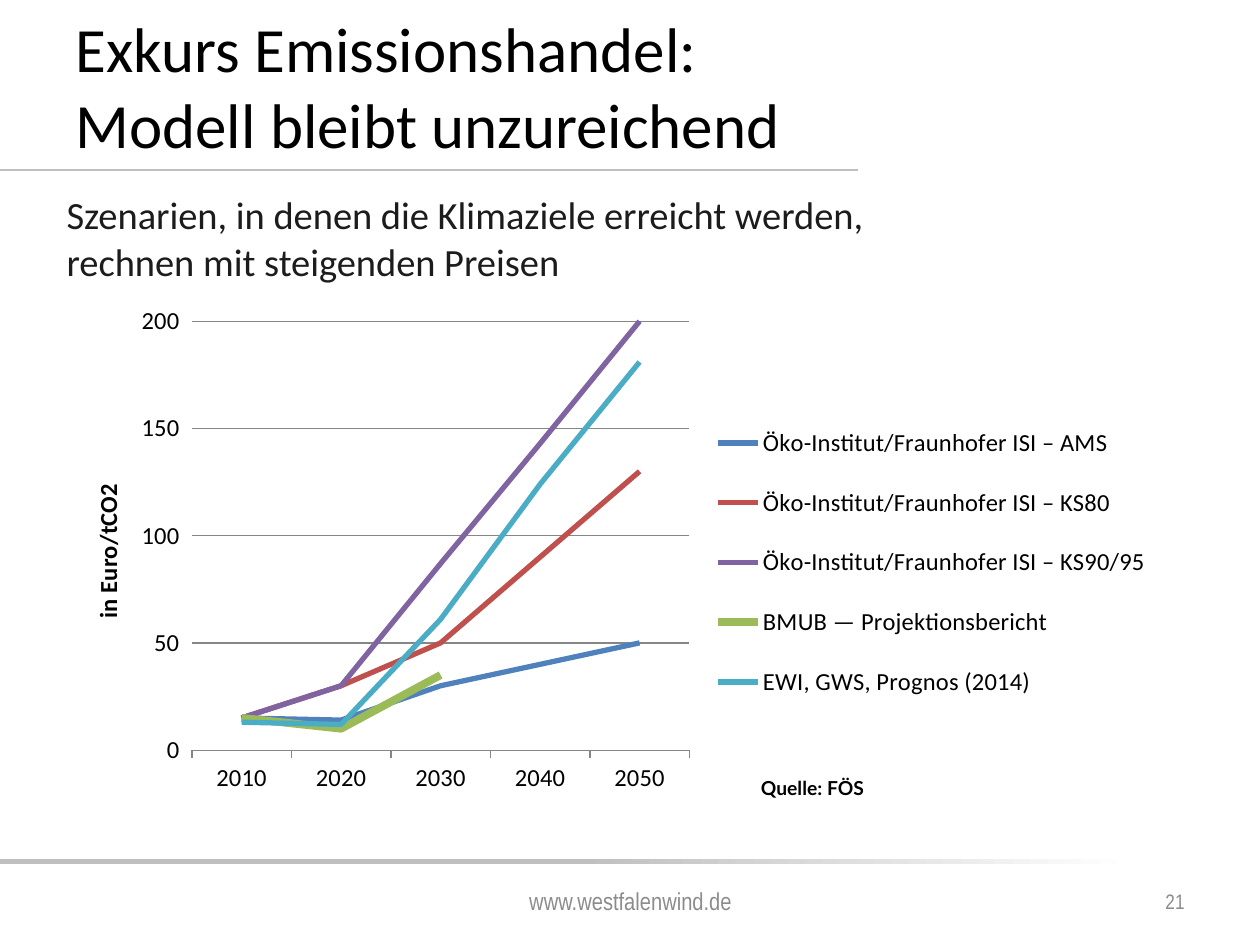
from copy import deepcopy
from dataclasses import dataclass

from lxml.etree import SubElement
from pptx import Presentation
from pptx.chart.data import CategoryChartData
from pptx.dml.color import RGBColor
from pptx.enum.chart import XL_CHART_TYPE as ChartType, XL_LEGEND_POSITION as LegendPosition
from pptx.enum.chart import XL_MARKER_STYLE as MarkerStyle, XL_TICK_MARK as TickMark
from pptx.enum.shapes import MSO_CONNECTOR as Connector, MSO_SHAPE as Shape
from pptx.enum.text import MSO_ANCHOR as Anchor, PP_ALIGN as Align
from pptx.oxml.ns import qn
from pptx.util import Inches, Pt


@dataclass(frozen=True)
class Theme:
    font: str = "Calibri"
    footer_font: str = "Arial Narrow"
    source_font: str = "Lato"
    black: str = "000000"
    body: str = "1C1C1C"
    muted: str = "8C8C8C"
    rule: str = "BFBFBF"
    grid: str = "868686"
    white: str = "FFFFFF"
    title_size: int = 36
    lead_size: int = 22
    chart_size: int = 14
    page_size: int = 12
    source_size: int = 11


THEME = Theme()

# Content
TITLE = ["Exkurs Emissionshandel: ", "Modell bleibt unzureichend"]
LEAD = "Szenarien, in denen die Klimaziele erreicht werden, rechnen mit steigenden Preisen"
SOURCE = "Quelle: FÖS"
FOOTER, PAGE = "www.westfalenwind.de", "21"
AXIS_TITLE = "in Euro/tCO2"
YEARS = ["2010", "2020", "2030", "2040", "2050"]
SCENARIOS = [  # name, values, colour, line width
    ("Öko-Institut/Fraunhofer ISI – AMS", (15, 14, 30, 40, 50), "4F81BD", 3),
    ("Öko-Institut/Fraunhofer ISI – KS80", (15, 30, 50, 90, 130), "C0504D", 3),
    ("Öko-Institut/Fraunhofer ISI – KS90/95", (15, 30, 87, 143, 200), "8064A2", 3),
    ("BMUB — Projektionsbericht", (15, 10, 35, None, None), "9BBB59", 4.5),
    ("EWI, GWS, Prognos (2014)", (13, 12, 61, 124, 181), "4BACC6", 3),
]

# Boxes in inches: left, top, width, height
TITLE_BOX = (0.5, 0.05, 9, 1.25)
LEAD_BOX = (0.43, 1.47, 7.48, 0.84)
CHART_BOX = (0.51, 2.02, 8.66, 4.57)
SOURCE_BOX = (5.94, 6.11, 2.59, 0.29)
FOOTER_BOX = (3.42, 6.95, 3.17, 0.4)
PAGE_BOX = (7.17, 6.95, 2.33, 0.4)
FOOTER_RULE_BOX = (0, 6.82, 10, 0.04)
TITLE_RULE = (0, 1.35, 6.81, 1.35)

# Shares of the chart's size
PLOT_SHARE = {"x": 0.117, "y": 0.116, "w": 0.456, "h": 0.745}
LEGEND_SHARE = {"x": 0.59, "y": 0.25, "w": 0.41, "h": 0.57}
AXIS_TITLE_SHARE = {"x": 0.02, "y": 0.39}


def inches(values):
    return [Inches(value) for value in values]


def rgb(color):
    return RGBColor.from_string(color)


def style(font, name, size, color, bold=False):
    font.name, font.size, font.bold = name, Pt(size), bold
    font.color.rgb = rgb(color)


def add_text(slide, box, text, name, size, color, bold=False,
             align=Align.LEFT, anchor=Anchor.TOP):
    frame = slide.shapes.add_textbox(*inches(box)).text_frame
    frame.word_wrap, frame.vertical_anchor = True, anchor
    paragraph = frame.paragraphs[0]
    paragraph.alignment = align
    run = paragraph.add_run()
    run.text = text
    style(run.font, name, size, color, bold)


def add_title(slide):
    title = slide.shapes.title
    title.left, title.top, title.width, title.height = inches(TITLE_BOX)
    title.text_frame.vertical_anchor = Anchor.MIDDLE
    paragraph = title.text_frame.paragraphs[0]
    paragraph.alignment = Align.LEFT
    for index, line in enumerate(TITLE):
        if index:
            paragraph.add_line_break()
        run = paragraph.add_run()
        run.text = line
        style(run.font, THEME.font, THEME.title_size, THEME.black)


def add_rules(slide):
    line = slide.shapes.add_connector(Connector.STRAIGHT, *inches(TITLE_RULE))
    line.line.color.rgb, line.line.width = rgb(THEME.rule), Pt(1.5)
    SubElement(line.element.spPr, qn("a:effectLst"))

    bar = slide.shapes.add_shape(Shape.RECTANGLE, *inches(FOOTER_RULE_BOX))
    bar.shadow.inherit = False
    bar.line.fill.background()
    bar.fill.gradient()
    bar.fill.gradient_angle = 0
    first = bar.element.spPr.find(".//" + qn("a:gs"))
    first.addnext(deepcopy(first))
    stops = [(0, THEME.rule), (0.46, THEME.rule), (0.9, THEME.white)]
    for stop, (position, color) in zip(bar.fill.gradient_stops, stops):
        stop.position, stop.color.rgb = position, rgb(color)


def set_layout(parent, shares, before, inner=False):
    """Place a chart part by shares of the chart's size."""
    for old in parent.findall(qn("c:layout")):
        parent.remove(old)
    layout = parent.makeelement(qn("c:layout"))
    manual = SubElement(layout, qn("c:manualLayout"))
    if inner:
        SubElement(manual, qn("c:layoutTarget")).set("val", "inner")
    for key in ("x", "y"):
        SubElement(manual, qn(f"c:{key}Mode")).set("val", "edge")
    for key, share in shares.items():
        SubElement(manual, qn(f"c:{key}")).set("val", str(share))
    parent.find(qn(before)).addprevious(layout)


def add_price_chart(slide):
    data = CategoryChartData()
    data.categories = YEARS
    for name, values, *_ in SCENARIOS:
        data.add_series(name, values)
    chart = slide.shapes.add_chart(ChartType.LINE, *inches(CHART_BOX), data).chart
    style(chart.font, THEME.font, THEME.chart_size, THEME.black)
    chart.has_title = False
    plot = chart.plots[0]
    plot.vary_by_categories = False
    for series, (_, _, color, width) in zip(plot.series, SCENARIOS):
        series.smooth = False
        series.marker.style = MarkerStyle.NONE
        series.format.line.color.rgb = rgb(color)
        series.format.line.width = Pt(width)

    # Axes
    prices, years = chart.value_axis, chart.category_axis
    prices.minimum_scale, prices.maximum_scale, prices.major_unit = 0, 200, 50
    prices.has_major_gridlines = True
    for line in (prices.major_gridlines.format.line, years.format.line):
        line.color.rgb, line.width = rgb(THEME.grid), Pt(0.75)
    prices.format.line.fill.background()
    for axis in (prices, years):
        axis.major_tick_mark, axis.minor_tick_mark = TickMark.OUTSIDE, TickMark.NONE
    axis_title = prices.axis_title
    run = axis_title.text_frame.paragraphs[0].add_run()
    run.text = AXIS_TITLE
    style(run.font, THEME.font, THEME.chart_size, THEME.black, bold=True)

    # Legend and placement
    chart.has_legend = True
    legend = chart.legend
    legend.position, legend.include_in_layout = LegendPosition.RIGHT, False
    style(legend.font, THEME.font, THEME.chart_size, THEME.black)
    plot_area = chart.element.find(".//" + qn("c:plotArea"))
    set_layout(plot_area, PLOT_SHARE, "c:lineChart", inner=True)
    set_layout(chart.element.find(".//" + qn("c:legend")), LEGEND_SHARE, "c:overlay")
    set_layout(plot_area.find(".//" + qn("c:title")), AXIS_TITLE_SHARE, "c:overlay")


def main():
    presentation = Presentation()
    presentation.slide_width, presentation.slide_height = Inches(10), Inches(7.5)
    slide = presentation.slides.add_slide(presentation.slide_layouts[5])
    add_rules(slide)
    add_title(slide)
    add_text(slide, FOOTER_BOX, FOOTER, THEME.footer_font, THEME.chart_size,
             THEME.muted, align=Align.CENTER, anchor=Anchor.MIDDLE)
    add_text(slide, PAGE_BOX, PAGE, THEME.footer_font, THEME.page_size,
             THEME.muted, align=Align.RIGHT, anchor=Anchor.MIDDLE)
    add_price_chart(slide)
    add_text(slide, SOURCE_BOX, SOURCE, THEME.source_font, THEME.source_size,
             THEME.black, bold=True)
    add_text(slide, LEAD_BOX, LEAD, THEME.font, THEME.lead_size, THEME.body)
    presentation.save("out.pptx")


if __name__ == "__main__":
    main()
